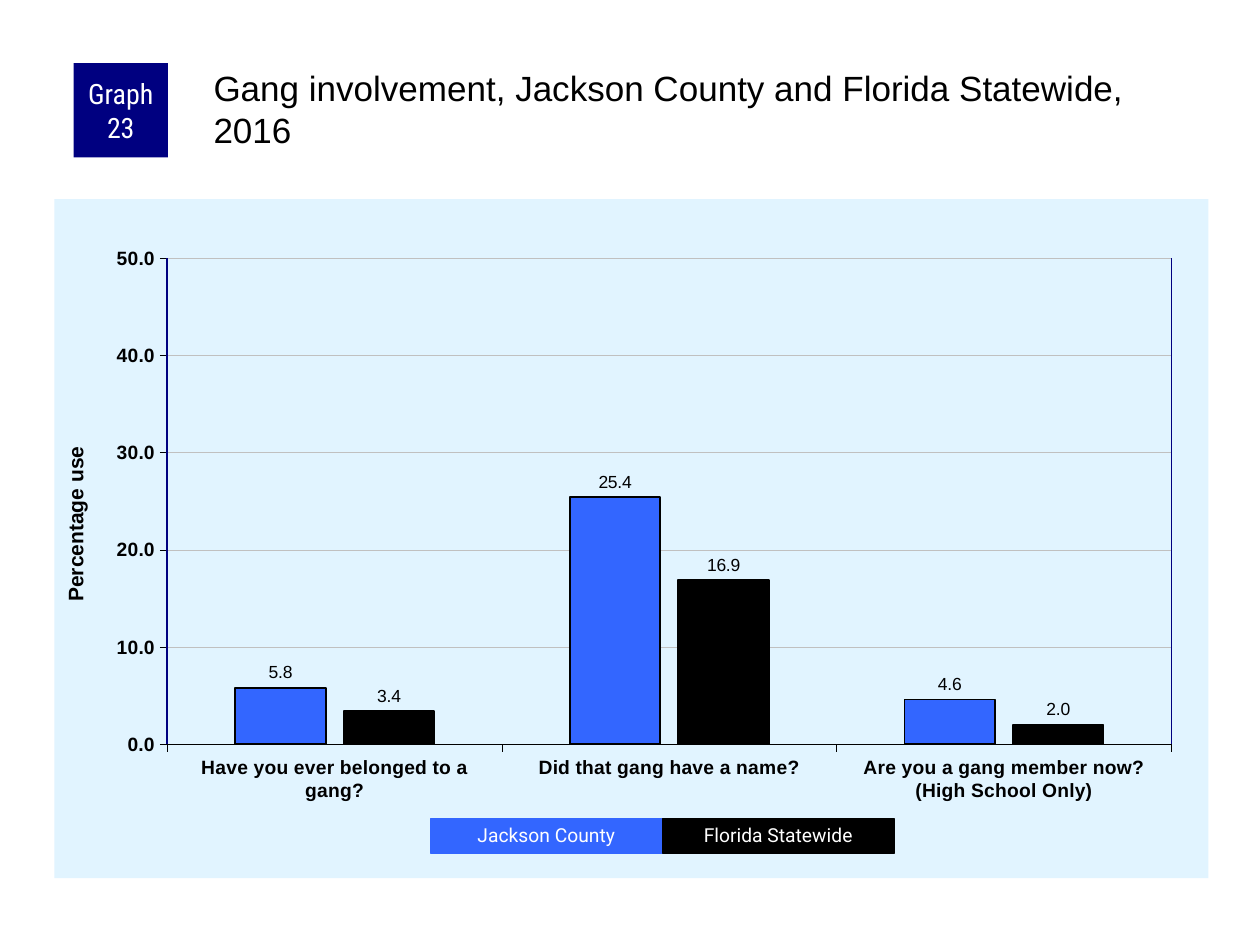
import pptx
import pptx.util
import pptx.oxml
import pptx.oxml.ns
import pptx.dml.color
import pptx.chart.data
import pptx.enum.chart
import pptx.enum.shapes
import pptx.enum.text
import lxml.etree

Pt = pptx.util.Pt
qn = pptx.oxml.ns.qn
BLACK, WHITE, BLUE, NAVY = "000000", "FFFFFF", "3366FF", "000080"
CHART = (31, 113.75, 659.5, 388)
PLOT = (0.098, 0.087, 0.87, 0.716)
CATS = ["Have you ever belonged to a gang?", "Did that gang have a name?",
        "Are you a gang member now?\n(High School Only)"]
ROWS = [("Jackson County", (5.8, 25.4, 4.6), BLUE),
        ("Florida Statewide", (3.4, 16.9, 2.0), BLACK)]


def tint(item, color):
    if hasattr(item, "solid"):
        item.solid()
        item = item.fore_color
    item.rgb = pptx.dml.color.RGBColor.from_string(color)


def style_font(font, name, size, color, bold=False):
    font.name, font.size, font.bold = name, Pt(size), bold
    tint(font.color, color)


def style_line(line, color, width):
    tint(line.fill, color)
    line.width = Pt(width)


def add_title(slide, text):
    title = slide.shapes.title
    title.left, title.top, title.width, title.height = map(Pt, (120, 36, 570, 60))
    frame = title.text_frame
    frame.text = text
    frame.word_wrap = True
    frame.auto_size = pptx.enum.text.MSO_AUTO_SIZE.NONE
    frame.vertical_anchor = pptx.enum.text.MSO_ANCHOR.TOP
    frame.margin_left = frame.margin_top = Pt(2)
    frame.margin_right = frame.margin_bottom = 0
    line = frame.paragraphs[0]
    line.alignment = pptx.enum.text.PP_ALIGN.LEFT
    style_font(line.runs[0].font, "Arial", 20, BLACK)


def add_box(slide, text, area, color, face, size):
    box = slide.shapes.add_shape(pptx.enum.shapes.MSO_SHAPE.RECTANGLE, *map(Pt, area))
    box.shadow.inherit = False
    tint(box.fill, color)
    box.line.fill.background()
    frame = box.text_frame
    frame.text = text
    frame.word_wrap = True
    frame.vertical_anchor = pptx.enum.text.MSO_ANCHOR.MIDDLE
    frame.margin_left = frame.margin_right = Pt(3.6)
    frame.margin_top = frame.margin_bottom = 0
    line = frame.paragraphs[0]
    line.alignment = pptx.enum.text.PP_ALIGN.CENTER
    style_font(line.runs[0].font, face, size, WHITE)
    return box


def add_key(slide, text, left, color):
    box = add_box(slide, text, (left, 468, 132.5, 19.5), color, "Roboto", 11)
    style_line(box.line, color, 0.75)
    box.text_frame.paragraphs[0].line_spacing = 0.9


def add_edge(slide, x, top, end):
    edge = slide.shapes.add_connector(
        pptx.enum.shapes.MSO_CONNECTOR.STRAIGHT, Pt(x), Pt(top), Pt(x), Pt(end))
    style_line(edge.line, NAVY, 1)
    lxml.etree.SubElement(edge._element.spPr, qn("a:effectLst"))


def place_plot(chart):
    area = chart._chartSpace.chart.plotArea
    for old in area.findall(qn("c:layout")):
        area.remove(old)
    layout = lxml.etree.Element(qn("c:layout"))
    manual = lxml.etree.SubElement(layout, qn("c:manualLayout"))
    pairs = [("layoutTarget", "inner"), ("xMode", "edge"), ("yMode", "edge")]
    for tag, value in pairs + list(zip("xywh", PLOT)):
        lxml.etree.SubElement(manual, qn("c:" + tag)).set("val", str(value))
    area.insert(0, layout)


def fill_chart(chart, color):
    chart._chartSpace.chart.addnext(pptx.oxml.parse_xml(
        f'<c:spPr {pptx.oxml.ns.nsdecls("c", "a")}><a:solidFill><a:srgbClr val="{color}"/>'
        '</a:solidFill><a:ln><a:noFill/></a:ln></c:spPr>'))


def style_axis(axis):
    axis.major_tick_mark = pptx.enum.chart.XL_TICK_MARK.OUTSIDE
    axis.minor_tick_mark = pptx.enum.chart.XL_TICK_MARK.NONE
    style_font(axis.tick_labels.font, "Arial", 11, BLACK, True)
    style_line(axis.format.line, BLACK, 0.25)


def style_scale(axis):
    axis.minimum_scale, axis.maximum_scale, axis.major_unit = 0, 50, 10
    axis.has_major_gridlines = True
    style_line(axis.major_gridlines.format.line, "C0C0C0", 0.25)
    frame = axis.axis_title.text_frame
    frame.text = "Percentage use"
    style_font(frame.paragraphs[0].runs[0].font, "Arial", 12, BLACK, True)


def style_bars(bars, color):
    tint(bars.format.fill, color)
    style_line(bars.format.line, BLACK, 1)
    bars.invert_if_negative = False
    tags = bars.data_labels
    tags.show_value = True
    tags.number_format, tags.number_format_is_linked = "0.0", False
    tags.position = pptx.enum.chart.XL_LABEL_POSITION.OUTSIDE_END
    style_font(tags.font, "Arial", 10, BLACK)


def add_chart(slide):
    data = pptx.chart.data.CategoryChartData(number_format="0.0")
    data.categories = CATS
    for name, values, color in ROWS:
        data.add_series(name, values)
    kind = pptx.enum.chart.XL_CHART_TYPE.COLUMN_CLUSTERED
    chart = slide.shapes.add_chart(kind, *map(Pt, CHART), data).chart
    chart.has_title = chart.has_legend = False
    style_font(chart.font, "Arial", 11.5, BLACK)
    fill_chart(chart, "E1F4FF")
    place_plot(chart)
    plot = chart.plots[0]
    plot.gap_width, plot.overlap, plot.vary_by_categories = 150, -20, False
    for axis in (chart.category_axis, chart.value_axis):
        style_axis(axis)
    style_scale(chart.value_axis)
    for bars, row in zip(plot.series, ROWS):
        style_bars(bars, row[2])


def main():
    deck = pptx.Presentation()
    deck.slide_width, deck.slide_height = Pt(720), Pt(540)
    slide = deck.slides.add_slide(deck.slide_layouts[5])
    add_title(slide, "Gang involvement, Jackson County and Florida Statewide, 2016")
    add_chart(slide)
    left, top, width, height = CHART
    x, y, wide, high = PLOT
    for side in (x, x + wide):
        add_edge(slide, left + side * width, top + y * height, top + (y + high) * height)
    add_box(slide, "Graph 23", (42, 36, 54, 54), NAVY, "Roboto Condensed", 16)
    for i, (name, values, color) in enumerate(ROWS):
        add_key(slide, name, 246 + i * 132.5, color)
    deck.save("out.pptx")


if __name__ == "__main__":
    main()
